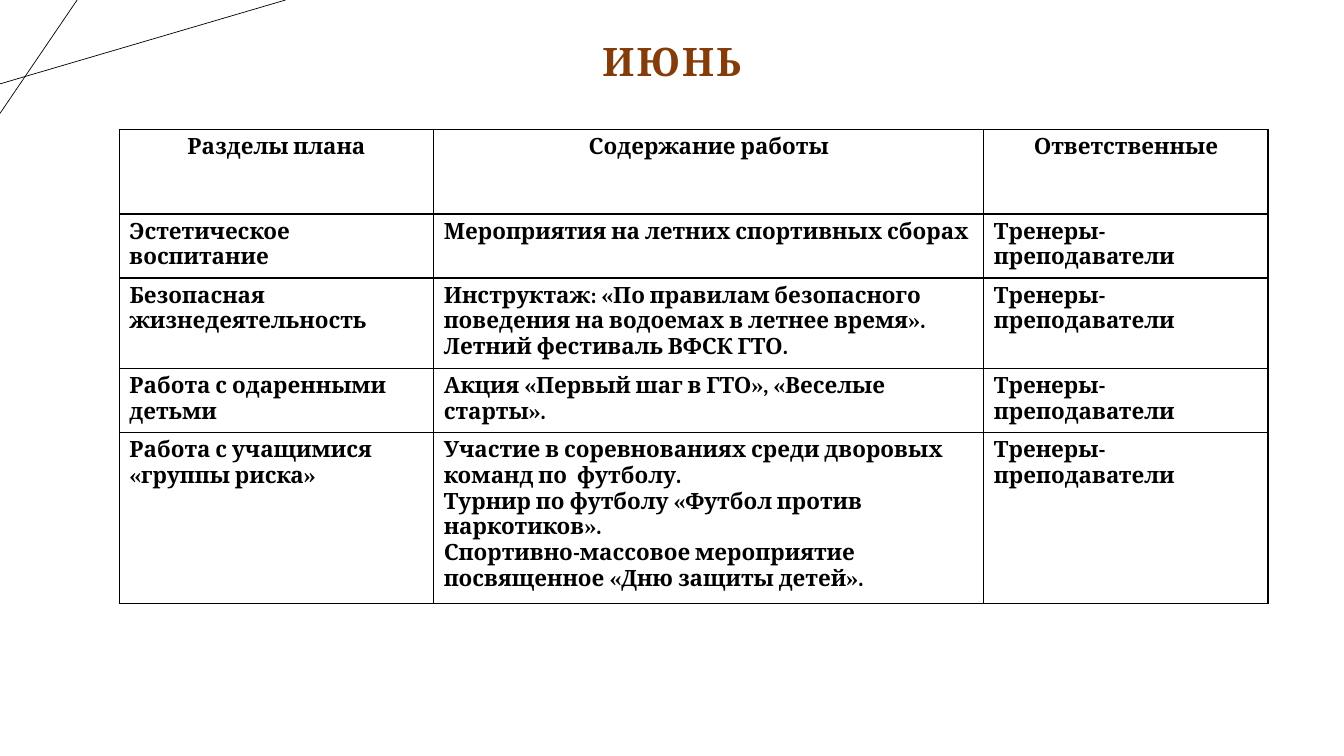
from pptx import Presentation
from pptx.dml.color import RGBColor
from pptx.enum.text import MSO_ANCHOR, PP_ALIGN
from pptx.oxml import parse_xml
from pptx.oxml.ns import nsdecls
from pptx.util import Pt

FONT = "Cambria"
INK = "000000"
BROWN = "843C0B"
STAFF = "Тренеры-преподаватели"
HEAD = ("Разделы плана", "Содержание работы", "Ответственные")
PLAN = (
    ("Эстетическое воспитание", "Мероприятия на летних спортивных сборах"),
    ("Безопасная жизнедеятельность",
     "Инструктаж: «По правилам безопасного поведения на водоемах в летнее время».\n"
     "Летний фестиваль ВФСК ГТО."),
    ("Работа с одаренными детьми", "Акция «Первый шаг в ГТО», «Веселые старты»."),
    ("Работа с учащимися «группы риска»",
     "Участие в соревнованиях среди дворовых команд по  футболу.\n"
     "Турнир по футболу «Футбол против наркотиков».\n"
     "Спортивно-массовое мероприятие посвященное «Дню защиты детей»."),
)
WIDTHS = (224.6, 393, 203)
HEIGHTS = (60.5, 44.6, 44.6, 44.6, 89.3)


def paint(color):
    """Turn a hex string into a colour."""
    return RGBColor.from_string(color)


def style(frame, size, color, align):
    """Format every paragraph and run of a text frame."""
    for para in frame.paragraphs:
        para.alignment = align
        for run in para.runs:
            font = run.font
            font.name, font.size, font.bold = FONT, Pt(size), True
            font.color.rgb = paint(color)


def add_rays(slide, left, top, width, height):
    """Draw the two crossing corner lines."""
    rays = (
        (0, 0.74 * height, width, 0),
        (0.27 * width, 0, 0, height),
    )
    for x1, y1, x2, y2 in rays:
        ray = slide.shapes.add_connector(
            1, Pt(left + x1), Pt(top + y1), Pt(left + x2), Pt(top + y2))
        ray.line.color.rgb = paint(INK)
        ray.line.width = Pt(0.5)
        ray._element.spPr.append(parse_xml(f"<a:effectLst {nsdecls('a')}/>"))


def add_title(slide, left, top, width, height):
    """Place the spaced, centred month name."""
    box = slide.shapes.add_textbox(Pt(left), Pt(top), Pt(width), Pt(height))
    frame = box.text_frame
    frame.word_wrap = True
    frame.vertical_anchor = MSO_ANCHOR.MIDDLE
    frame.text = "ИЮНЬ"
    style(frame, 28, BROWN, PP_ALIGN.CENTER)
    para = frame.paragraphs[0]
    para.line_spacing = 0.9
    para.runs[0].font._element.set("spc", "150")


def add_edges(cell):
    """Give a cell thin borders on all four sides."""
    props = cell._tc.get_or_add_tcPr()
    for spot, side in enumerate(("lnL", "lnR", "lnT", "lnB")):
        props.insert(spot, parse_xml(
            f'<a:{side} {nsdecls("a")} w="{Pt(1)}"><a:solidFill>'
            f'<a:srgbClr val="{INK}"/></a:solidFill></a:{side}>'))


def add_plan(slide, left, top, width, height):
    """Build the plan table."""
    rows = (HEAD, *((part, work, STAFF) for part, work in PLAN))
    table = slide.shapes.add_table(
        len(rows), len(HEAD), Pt(left), Pt(top), Pt(width), Pt(height)).table
    table.horz_banding = False
    for col, size in zip(table.columns, WIDTHS):
        col.width = Pt(size)
    for row, size in zip(table.rows, HEIGHTS):
        row.height = Pt(size)
    for r, row in enumerate(rows):
        for c, text in enumerate(row):
            cell = table.cell(r, c)
            cell.text_frame.text = text
            cell.fill.background()
            style(cell.text_frame, 16, INK,
                  PP_ALIGN.LEFT if r else PP_ALIGN.CENTER)
            add_edges(cell)


def main():
    """Build and save the slide."""
    deck = Presentation()
    deck.slide_width, deck.slide_height = Pt(960), Pt(540)
    slide = deck.slides.add_slide(deck.slide_layouts[6])
    add_rays(slide, 0, 0, 204, 81)
    add_title(slide, 66, 18.7, 828, 53.3)
    add_plan(slide, 85.2, 92.4, sum(WIDTHS), sum(HEIGHTS))
    deck.save("out.pptx")


if __name__ == "__main__":
    main()
